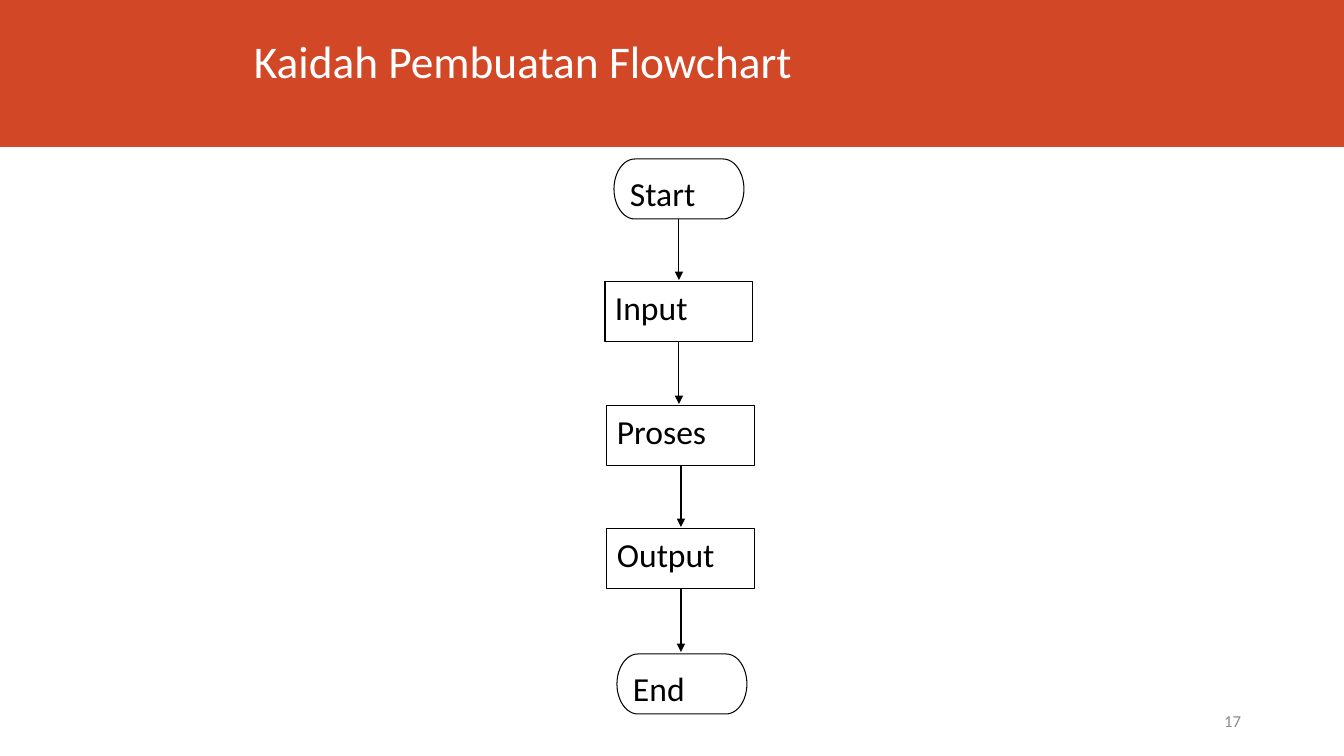
from lxml import etree
from pptx import Presentation
from pptx import util as u
from pptx.dml.color import RGBColor
from pptx.enum import shapes, text
from pptx.oxml.ns import qn

TITLE = "Kaidah Pembuatan Flowchart"
PAGE = "17"
STEPS = [
    ("Start", "terminator", 679, 159),
    ("Input", "process", 679, 282),
    ("Proses", "process", 681, 406),
    ("Output", "process", 681, 529),
    ("End", "terminator", 682, 654),
]
KINDS = {
    "terminator": (shapes.MSO_SHAPE.FLOWCHART_TERMINATOR, 130),
    "process": (shapes.MSO_SHAPE.FLOWCHART_PROCESS, 148),
}
COLORS = {"band": "D24726", "paper": "FFFFFF", "ink": "000000", "page": "8C8C8C"}
FONT = "Calibri"
SLIDE_W, SLIDE_H = 1344, 756
BAND_H = 147
STEP_H = 60
ARROW_GAP = 2
LINE_PT = 0.75


def px(n):
    return u.Emu(round(n * 914400 / 100.8))


def rgb(name):
    return RGBColor.from_string(COLORS[name])


def write(s, words, size, color, anchor, align=text.PP_ALIGN.LEFT):
    tf = s.text_frame
    tf.word_wrap = True
    tf.vertical_anchor = anchor
    p = tf.paragraphs[0]
    p.alignment = align
    r = p.add_run()
    r.text = words
    r.font.name = FONT
    r.font.size = u.Pt(size)
    r.font.color.rgb = rgb(color)


def add_box(sp, kind, x, y, w, h, fill, line=None):
    s = sp.add_shape(kind, px(x), px(y), px(w), px(h))
    s.shadow.inherit = False
    s.fill.solid()
    s.fill.fore_color.rgb = rgb(fill)
    if line:
        s.line.color.rgb = rgb(line)
        s.line.width = u.Pt(LINE_PT)
    else:
        s.line.fill.background()
    return s


def add_arrow(sp, source, x, y1, y2):
    c = sp.add_connector(shapes.MSO_CONNECTOR.STRAIGHT, px(x), px(y1), px(x), px(y2))
    c.begin_connect(source, 2)
    c.line.color.rgb = rgb("ink")
    c.line.width = u.Pt(LINE_PT)
    etree.SubElement(c.line._get_or_add_ln(), qn("a:tailEnd"), type="triangle")
    etree.SubElement(c._element.spPr, qn("a:effectLst"))


def main():
    prs = Presentation()
    prs.slide_width, prs.slide_height = px(SLIDE_W), px(SLIDE_H)
    sp = prs.slides.add_slide(prs.slide_layouts[6]).shapes

    add_box(sp, shapes.MSO_SHAPE.RECTANGLE, 0, 0, SLIDE_W, BAND_H, "band")
    page = sp.add_textbox(px(890), px(701), px(361), px(40))
    write(page, PAGE, 12, "page", text.MSO_ANCHOR.MIDDLE, text.PP_ALIGN.RIGHT)
    title = sp.add_textbox(px(244), px(25), px(857), px(68))
    write(title, TITLE, 32.4, "paper", text.MSO_ANCHOR.BOTTOM)

    boxes = []
    for words, kind, center, top in STEPS:
        preset, w = KINDS[kind]
        s = add_box(sp, preset, center - w / 2, top, w, STEP_H, "paper", "ink")
        write(s, words, 24, "ink", text.MSO_ANCHOR.TOP)
        boxes.append(s)

    for s, step, following in zip(boxes, STEPS, STEPS[1:]):
        add_arrow(sp, s, step[2], step[3] + STEP_H, following[3] - ARROW_GAP)

    prs.save("out.pptx")


if __name__ == "__main__":
    main()
